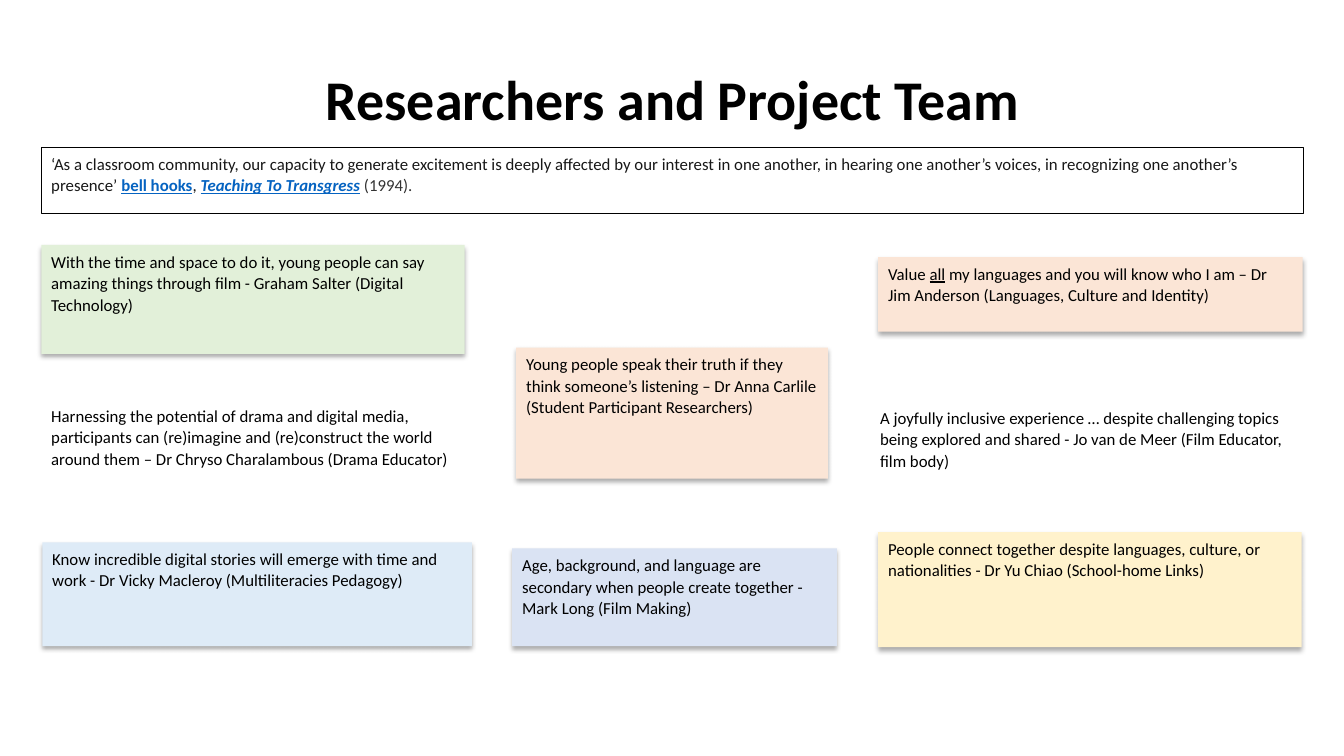
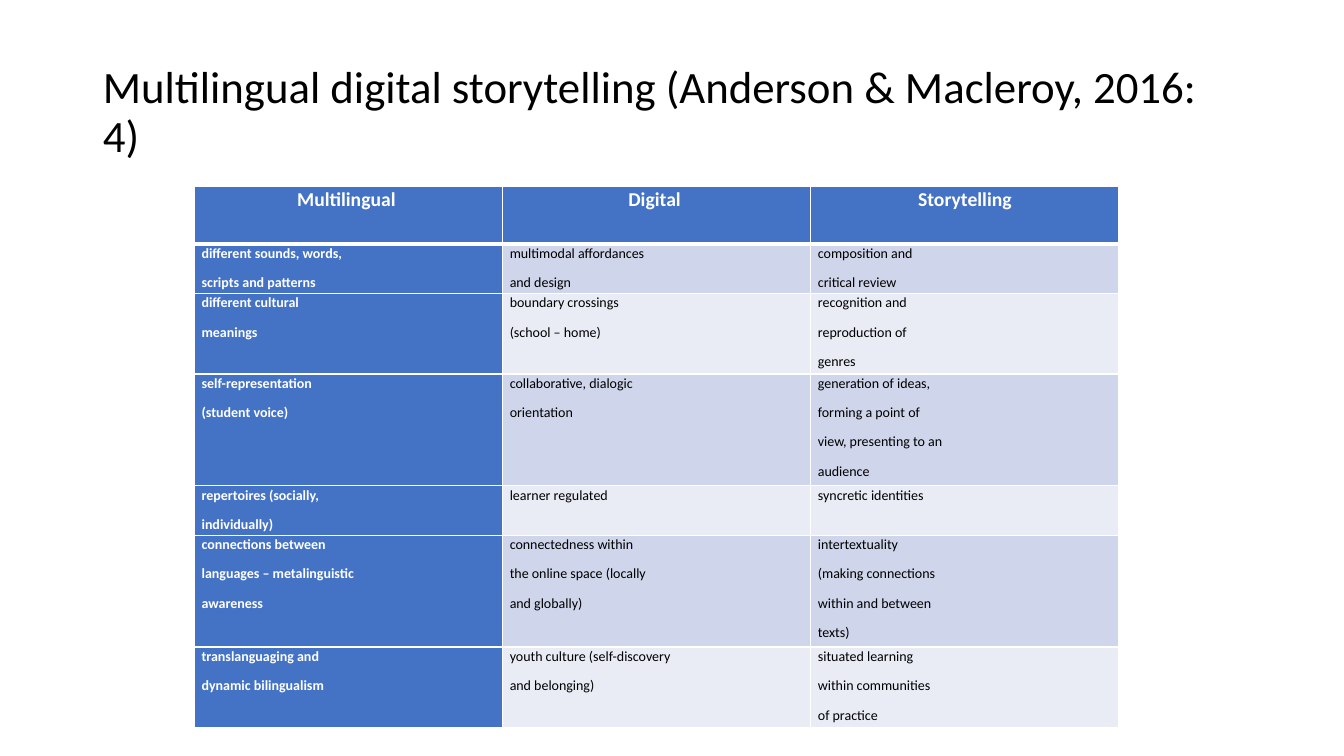
from lxml import etree
from pptx import Presentation
from pptx.dml.color import RGBColor
from pptx.enum import shapes, text
from pptx.oxml import parse_xml
from pptx.oxml.ns import nsdecls, qn
from pptx.util import Inches, Pt

COLORS = {
    "black": "000000", "white": "FFFFFF", "ink": "181818", "gray": "333333",
    "link": "0563C1", "peach": "FBE5D6", "sky": "DEEBF7", "cream": "FFF2CC",
    "periwinkle": "DAE3F3", "green": "E2F0D9",
    "header": "4472C4", "band_dark": "CFD5EA", "band_light": "E9EBF5",
}
FONT = "Calibri"
SHADOW = (
    f'<a:effectLst {nsdecls("a")}>'
    f'<a:outerShdw blurRad="{Pt(3.5)}" dist="{Pt(2.2)}" dir="5400000" algn="t" rotWithShape="0">'
    f'<a:srgbClr val="{COLORS["black"]}"><a:alpha val="32000"/></a:srgbClr>'
    '</a:outerShdw></a:effectLst>'
)


def add_runs(paragraph, runs, size, line_spacing=1.07, space_after=8):
    """Append (text, colour name, styles) runs; styles may hold b, i and u."""
    paragraph.line_spacing = line_spacing
    paragraph.space_after = Pt(space_after)
    for wording, color, styles in runs:
        run = paragraph.add_run()
        run.text = wording
        font = run.font
        font.name = FONT
        font.size = Pt(size)
        font.color.rgb = RGBColor.from_string(COLORS[color])
        font.bold = "b" in styles
        font.italic = "i" in styles
        font.underline = "u" in styles


def add_titled_slide(wording, size, styles, align, line_spacing, space_after):
    slide = presentation.slides.add_slide(presentation.slide_layouts[5])
    title = slide.shapes.title
    title.left, title.top = Inches(0.92), Inches(0.4)
    title.width, title.height = Inches(11.5), Inches(1.45)
    frame = title.text_frame
    frame.word_wrap = True
    frame.auto_size = text.MSO_AUTO_SIZE.NONE
    frame.vertical_anchor = text.MSO_ANCHOR.MIDDLE
    paragraph = frame.paragraphs[0]
    paragraph.alignment = align
    add_runs(paragraph, [(wording, "black", styles)], size, line_spacing, space_after)
    return slide


presentation = Presentation()
presentation.slide_width = Inches(13.33)
presentation.slide_height = Inches(7.5)

# Slide 1: team quotes
slide = add_titled_slide("Researchers and Project Team", 40, "b", text.PP_ALIGN.CENTER, 1.07, 8)
slide.shapes.title.text_frame.margin_bottom = Inches(0.4)

# left, top, width, height, fill, runs
cards = [
    (5.12, 3.45, 3.09, 1.3, "peach", [
        ("Young people speak their truth if they think someone’s listening – "
         "Dr Anna Carlile (Student Participant Researchers)", "black", "")]),
    (0.42, 5.38, 4.26, 1.03, "sky", [
        ("Know incredible digital stories will emerge with time and work - "
         "Dr Vicky Macleroy (Multiliteracies Pedagogy)", "black", "")]),
    (8.71, 5.28, 4.2, 1.14, "cream", [
        ("People connect together despite languages, culture, or nationalities - "
         "Dr Yu Chiao (School-home Links)", "black", "")]),
    (8.71, 2.55, 4.21, 0.74, "peach", [
        ("Value ", "black", ""),
        ("all", "black", "u"),
        (" my languages and you will know who I am – "
         "Dr Jim Anderson (Languages, Culture and Identity)", "black", "")]),
    (5.08, 5.44, 3.22, 0.97, "periwinkle", [
        ("Age, background, and language are secondary when people create together - "
         "Mark Long (Film Making)", "black", "")]),
    (0.41, 2.43, 4.2, 1.08, "green", [
        ("With the time and space to do it, young people can say amazing things "
         "through film - Graham Salter (Digital Technology)", "black", "")]),
    (0.41, 1.46, 12.52, 0.66, "white", [
        ("‘As a classroom community, our capacity to generate excitement is deeply "
         "affected by our interest in one another, in hearing one another’s voices, "
         "in recognizing one another’s presence’ ", "ink", ""),
        ("bell hooks", "link", "bu"),
        (", ", "ink", ""),
        ("Teaching To Transgress", "link", "biu"),
        (" ", "gray", "bi"),
        ("(1994).", "gray", "")]),
    (0.41, 3.96, 4.26, 0.74, None, [
        ("Harnessing the potential of drama and digital media, participants can "
         "(re)imagine and (re)construct the world around them – "
         "Dr Chryso Charalambous (Drama Educator)", "black", "")]),
    (8.63, 3.98, 4.29, 0.74, None, [
        ("A joyfully inclusive experience … despite challenging topics being explored "
         "and shared - Jo van de Meer (Film Educator, film body)", "black", "")]),
]
for left, top, width, height, fill, runs in cards:
    box = (Inches(left), Inches(top), Inches(width), Inches(height))
    if fill is None:
        card = slide.shapes.add_textbox(*box)
    else:
        card = slide.shapes.add_shape(shapes.MSO_SHAPE.RECTANGLE, *box)
        card.fill.solid()
        card.fill.fore_color.rgb = RGBColor.from_string(COLORS[fill])
        if fill == "white":
            card.shadow.inherit = False
            card.line.color.rgb = RGBColor.from_string(COLORS["black"])
            card.line.width = Pt(0.75)
        else:
            card.line.fill.background()
            card.element.spPr.append(parse_xml(SHADOW))
    frame = card.text_frame
    frame.word_wrap = True
    frame.vertical_anchor = text.MSO_ANCHOR.TOP
    paragraph = frame.paragraphs[0]
    paragraph.alignment = text.PP_ALIGN.LEFT
    add_runs(paragraph, runs, 12)

# Slide 2: storytelling table
slide = add_titled_slide("Multilingual digital storytelling (Anderson & Macleroy, 2016: 4)",
                         32, "", text.PP_ALIGN.LEFT, 0.9, 0)

rows = [
    ("Multilingual ", "Digital ", "Storytelling"),
    ("different sounds, words,\nscripts and patterns",
     "multimodal affordances\nand design",
     "composition and\ncritical review"),
    ("different cultural\nmeanings",
     "boundary crossings\n(school – home)",
     "recognition and\nreproduction of\ngenres"),
    ("self-representation\n(student voice)",
     "collaborative, dialogic\norientation",
     "generation of ideas,\nforming a point of\nview, presenting to an\naudience"),
    ("repertoires (socially,\nindividually)", "learner regulated", "syncretic identities"),
    ("connections between\nlanguages – metalinguistic\nawareness",
     "connectedness within\nthe online space (locally\nand globally)",
     "intertextuality\n(making connections\nwithin and between\ntexts)"),
    ("translanguaging and\ndynamic bilingualism",
     "youth culture (self-discovery\nand belonging)",
     "situated learning\nwithin communities\nof practice"),
]
row_heights = [0.57, 0.49, 0.8, 1.11, 0.49, 1.11, 0.8]
table = slide.shapes.add_table(len(rows), 3, Inches(1.93), Inches(1.85),
                               Inches(9.17), Inches(sum(row_heights))).table
for column in table.columns:
    column.width = Inches(9.17 / 3)

for row_index, (row, height) in enumerate(zip(rows, row_heights)):
    table.rows[row_index].height = Inches(height)
    for column_index, wording in enumerate(row):
        is_header = row_index == 0
        emphasized = is_header or column_index == 0
        cell = table.cell(row_index, column_index)
        cell.margin_left = cell.margin_right = Inches(0.07)
        cell.margin_top = cell.margin_bottom = 0

        properties = cell._tc.get_or_add_tcPr()
        for side in ("lnL", "lnR", "lnT", "lnB"):
            thick = (is_header and side == "lnB") or (row_index == 1 and side == "lnT")
            border = etree.SubElement(properties, qn(f"a:{side}"), w=str(Pt(3 if thick else 1)))
            solid = etree.SubElement(border, qn("a:solidFill"))
            etree.SubElement(solid, qn("a:srgbClr"), val=COLORS["white"])

        band = "band_dark" if row_index % 2 else "band_light"
        cell.fill.solid()
        cell.fill.fore_color.rgb = RGBColor.from_string(COLORS["header" if emphasized else band])

        frame = cell.text_frame
        for line_index, line in enumerate(wording.split("\n")):
            paragraph = frame.add_paragraph() if line_index else frame.paragraphs[0]
            paragraph.alignment = text.PP_ALIGN.CENTER if is_header else text.PP_ALIGN.LEFT
            run = (line, "white", "b") if emphasized else (line, "black", "")
            add_runs(paragraph, [run], 14 if is_header else 10)

presentation.save("out.pptx")
